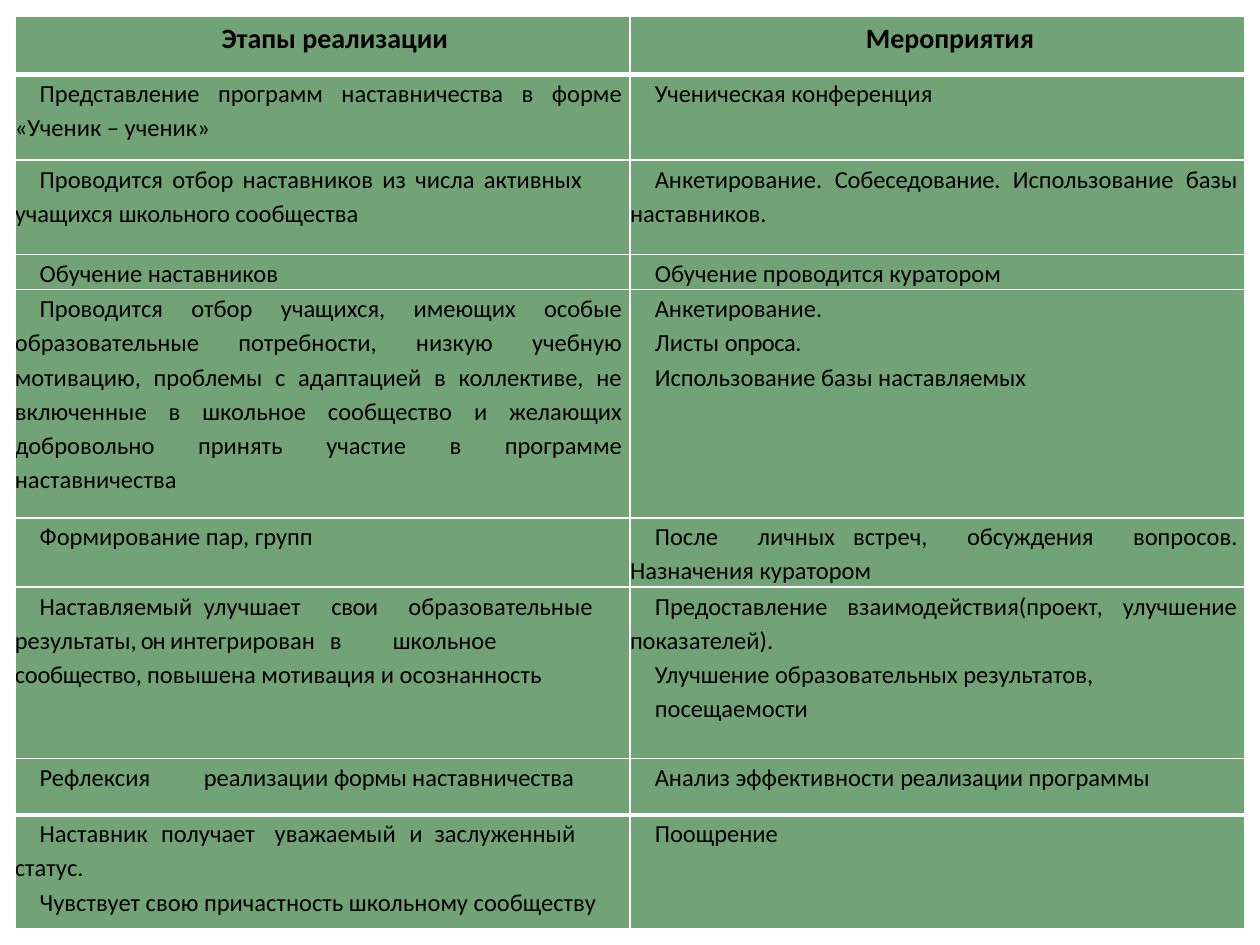
"""Build a slide with a table of mentoring stages and their activities."""
import lxml.etree
import pptx
import pptx.dml.color
import pptx.enum.text
import pptx.oxml.ns
import pptx.util

Cm, Pt = pptx.util.Cm, pptx.util.Pt
qn = pptx.oxml.ns.qn
ALIGN = pptx.enum.text.PP_ALIGN

THEME = {
    "font": "Calibri",
    "text": pptx.dml.color.RGBColor.from_string("000000"),
    "cell": pptx.dml.color.RGBColor.from_string("72A376"),
    "border": "FFFFFF",
    "header_size": Pt(16),
    "body_size": Pt(14),
    "thin": Pt(1),
    "thick": Pt(3),
}
LEFT, TOP, COLUMN_WIDTH = 0.3, 0.33, 12.4
INDENT, RIGHT_MARGIN, LINE_SPACING = 0.5, 0.15, 1.15


def entry(*spans, tabs=(), right=RIGHT_MARGIN, indent=INDENT):
    """Describe a paragraph; a span is a text or a (text, letter spacing) pair."""
    return {"spans": spans, "tabs": tabs, "right": right, "indent": indent}


ROWS = [
    (1.17, [entry("Этапы реализации")], [entry("Мероприятия")]),
    (1.73,
     [entry("Представление программ наставничества в форме «Ученик – ученик»")],
     [entry("Ученическая конференция")]),
    (1.9,
     [entry("Проводится отбор наставников из числа активных учащихся ",
            ("школьного ", -0.1), "сообщества", right=0.96)],
     [entry("Анкетирование. ", ("Собеседование. ", -0.1),
            "Использование базы наставников.")]),
    (0.71, [entry("Обучение наставников")], [entry("Обучение проводится куратором")]),
    (4.6,
     [entry("Проводится отбор учащихся, имеющих особые образовательные потребности, "
            "низкую учебную мотивацию, проблемы с адаптацией в коллективе, "
            "не включенные в школьное сообщество и желающих добровольно принять "
            "участие в программе наставничества")],
     [entry("Анкетирование."), entry("Листы ", ("опроса.", -0.3)),
      entry("Использование базы наставляемых")]),
    (1.4,
     [entry("Формирование пар, групп")],
     [entry("После личных\tвстреч, ", ("обсуждения ", -0.1),
            "вопросов. Назначения куратором", tabs=(4.06, 6.05))]),
    (3.45,
     [entry("Наставляемый\tулучшает ", ("свои ", -0.3),
            "образовательные результаты,\t", ("он ", -0.7),
            "интегрирован\tв\tшкольное", tabs=(2.54, 4.62, 6.58, 7.62), right=0.75),
      entry(("сообщество, ", -0.2), "повышена мотивация и осознанность", indent=0)],
     [entry("Предоставление взаимодействия(проект, улучшение показателей)."),
      entry("Улучшение образовательных результатов,"), entry("посещаемости")]),
    (1.14,
     [entry("Рефлексия\tреализации ", ("формы ", -0.2), "наставничества",
            tabs=(3.53, 6.99))],
     [entry("Анализ эффективности ", ("реализации ", -0.1), "программы")]),
    (2.29,
     [entry("Наставник получает\tуважаемый ", ("и ", -0.9), "заслуженный статус.",
            tabs=(5.23,), right=1.1),
      entry("Чувствует свою причастность школьному сообществу")],
     [entry("Поощрение")]),
]


def apply(target, values):
    """Set every attribute named in a dict."""
    for name, value in values.items():
        setattr(target, name, value)


def add_borders(cell, widths):
    """Draw the left, right, top and bottom borders of a cell."""
    properties = cell._tc.get_or_add_tcPr()
    for side, width in zip("LRTB", widths):
        line = lxml.etree.SubElement(properties, qn(f"a:ln{side}"), w=str(width))
        solid = lxml.etree.SubElement(line, qn("a:solidFill"))
        lxml.etree.SubElement(solid, qn("a:srgbClr"), val=THEME["border"])


def write_paragraph(para, content, header):
    """Fill one paragraph with its spans, tab stops and format."""
    properties = para._p.get_or_add_pPr()
    properties.set("marL", "0")
    properties.set("indent", str(Cm(content["indent"])))
    properties.set("marR", str(Cm(0 if header else content["right"])))
    if content["tabs"]:
        stops = lxml.etree.SubElement(properties, qn("a:tabLst"))
        for position in content["tabs"]:
            lxml.etree.SubElement(stops, qn("a:tab"), pos=str(Cm(position)), algn="l")
    apply(para, {"alignment": ALIGN.CENTER if header else ALIGN.JUSTIFY,
                 "line_spacing": LINE_SPACING})
    for item in content["spans"]:
        text, spacing = (item, 0) if isinstance(item, str) else item
        span = para.add_run()
        span.text = text
        apply(span.font, {"name": THEME["font"], "bold": header,
                          "size": THEME["header_size" if header else "body_size"]})
        span.font.color.rgb = THEME["text"]
        if spacing:
            span._r.get_or_add_rPr().set("spc", str(round(spacing * 100)))


def write_cell(cell, contents, header, borders):
    """Format a cell and write its paragraphs."""
    apply(cell, dict.fromkeys(
        ("margin_left", "margin_right", "margin_top", "margin_bottom"), 0))
    add_borders(cell, borders)
    cell.fill.solid()
    cell.fill.fore_color.rgb = THEME["cell"]
    frame = cell.text_frame
    for index, content in enumerate(contents):
        para = frame.add_paragraph() if index else frame.paragraphs[0]
        write_paragraph(para, content, header)


def main():
    """Build and save the deck."""
    deck = pptx.Presentation()
    apply(deck, {"slide_width": Cm(25.4), "slide_height": Cm(19.05)})
    page = deck.slides.add_slide(deck.slide_layouts[6])
    height = sum(row[0] for row in ROWS)
    table = page.shapes.add_table(len(ROWS), 2, Cm(LEFT), Cm(TOP),
                                  Cm(2 * COLUMN_WIDTH), Cm(height)).table
    for column in table.columns:
        column.width = Cm(COLUMN_WIDTH)
    thin, thick = THEME["thin"], THEME["thick"]
    last = len(ROWS) - 1
    for number, (row_height, *cells) in enumerate(ROWS):
        table.rows[number].height = Cm(row_height)
        upper = thick if number in (1, last) else thin
        lower = thick if number in (0, last - 1) else thin
        for column, contents in enumerate(cells):
            write_cell(table.cell(number, column), contents, number == 0,
                       (thin, thin, upper, lower))
    deck.save("out.pptx")


if __name__ == "__main__":
    main()
